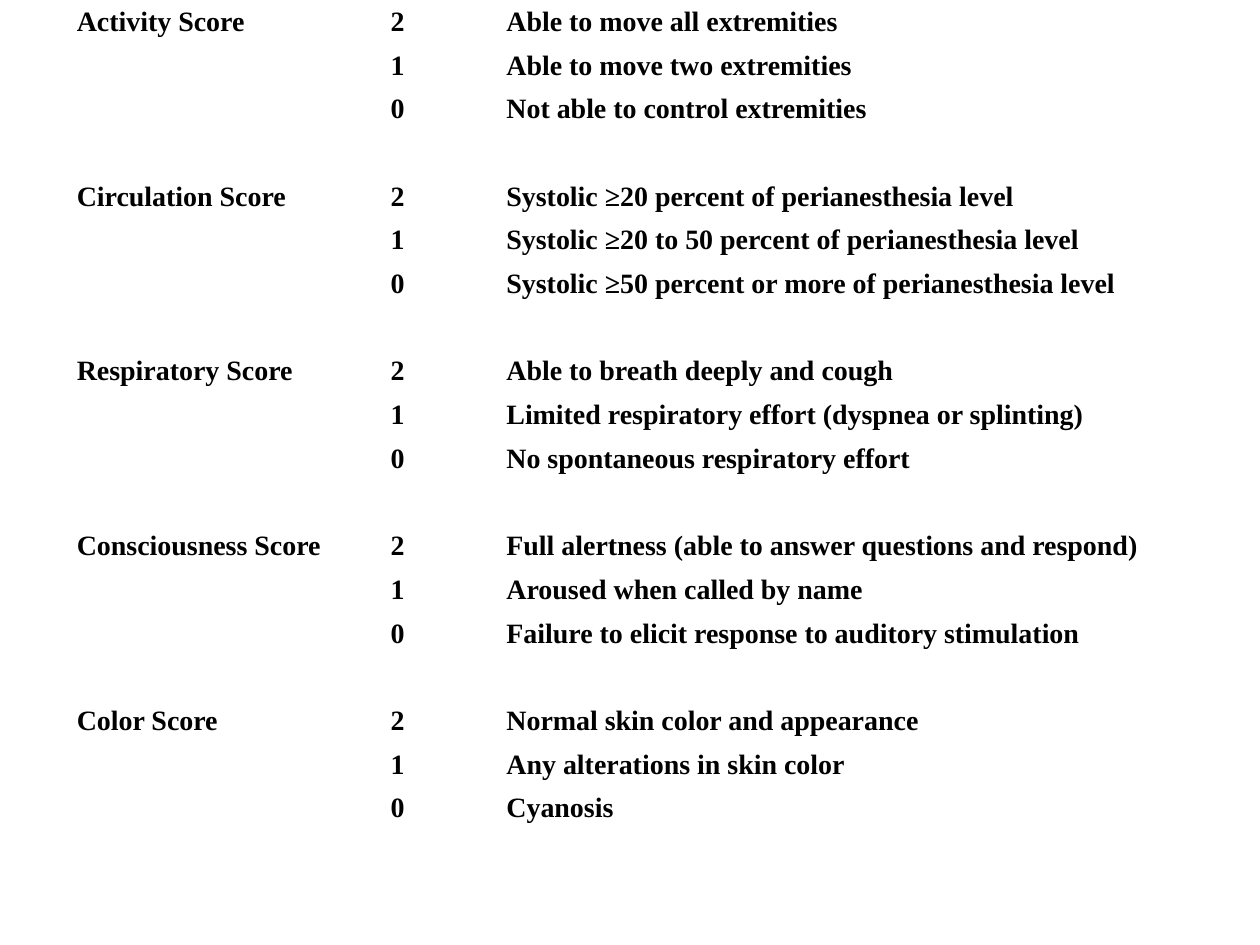
from pptx import Presentation
from pptx.dml.color import RGBColor
from pptx.enum.text import MSO_ANCHOR as Anchor
from pptx.util import Inches, Pt

BLACK = RGBColor(0, 0, 0)

# Descriptions run from score 2 down to score 0
SCORES = {
    "Activity Score": (
        "Able to move all extremities",
        "Able to move two extremities",
        "Not able to control extremities",
    ),
    "Circulation Score": (
        "Systolic ≥20 percent of perianesthesia level",
        "Systolic ≥20 to 50 percent of perianesthesia level",
        "Systolic ≥50 percent or more of perianesthesia level",
    ),
    "Respiratory Score": (
        "Able to breath deeply and cough",
        "Limited respiratory effort (dyspnea or splinting)",
        "No spontaneous respiratory effort",
    ),
    "Consciousness Score": (
        "Full alertness (able to answer questions and respond)",
        "Aroused when called by name",
        "Failure to elicit response to auditory stimulation",
    ),
    "Color Score": (
        "Normal skin color and appearance",
        "Any alterations in skin color",
        "Cyanosis",
    ),
}


class Deck:
    """Holds the text style and the current slide."""

    def __init__(self, slide, font="Times New Roman", size=16, color=BLACK):
        self.slide = slide
        self.font = font
        self.size = Pt(size)
        self.color = color

    def label(self, cell, text):
        run = cell.text_frame.paragraphs[0].add_run()
        run.text = text
        run.font.name = self.font
        run.font.size = self.size
        run.font.bold = True
        run.font.color.rgb = self.color

    def table(self, rows, left, top, widths, height):
        frame = self.slide.shapes.add_table(
            len(rows), len(widths), Inches(left), Inches(top),
            Inches(sum(widths)), Inches(height))
        table = frame.table
        table.first_row = table.horz_banding = False
        for col, width in zip(table.columns, widths):
            col.width = Inches(width)
        for r, row in enumerate(rows):
            for c, text in enumerate(row):
                cell = table.cell(r, c)
                cell.fill.background()
                cell.margin_top = cell.margin_bottom = 0
                cell.vertical_anchor = Anchor.MIDDLE
                if text:
                    self.label(cell, text)


def score_rows():
    rows = []
    for name, texts in SCORES.items():
        for i, text in enumerate(texts):
            rows.append((name if i == 0 else "", str(2 - i), text))
        rows.append(("", "", ""))  # spacer row after each group
    return rows


def main():
    prs = Presentation()
    prs.slide_width, prs.slide_height = Inches(10), Inches(7.5)
    deck = Deck(prs.slides.add_slide(prs.slide_layouts[6]))

    # Recovery score table
    deck.table(score_rows(), 0.51, 0, (2.49, 0.92, 5.61), 6.94)

    prs.save("out.pptx")


if __name__ == "__main__":
    main()
